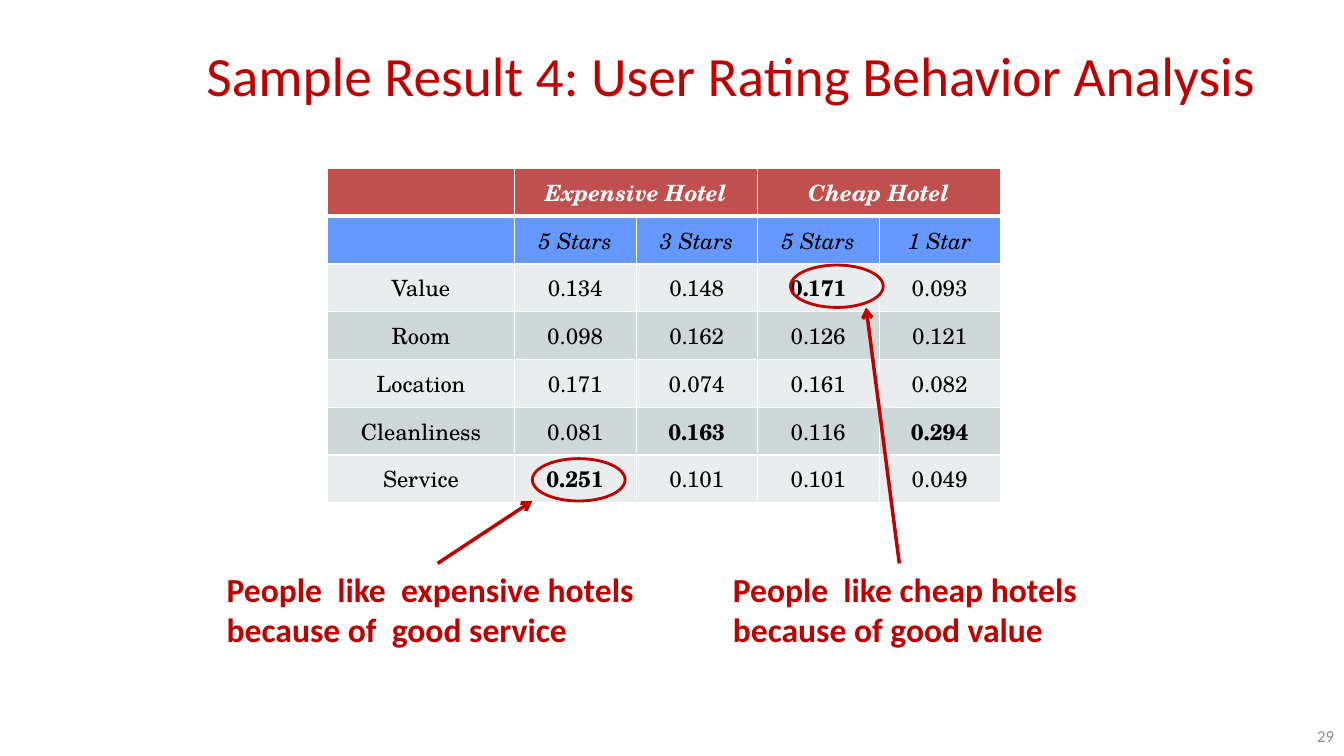
"""Build the slide on user rating behavior for expensive and cheap hotels."""
from dataclasses import dataclass

from lxml.etree import SubElement
from pptx import Presentation
from pptx.dml.color import RGBColor
from pptx.enum.shapes import MSO_CONNECTOR as Connector, MSO_SHAPE as Shape
from pptx.enum.text import MSO_ANCHOR as Anchor, PP_ALIGN as Align
from pptx.oxml.ns import qn
from pptx.slide import Slide
from pptx.table import _Cell as Cell
from pptx.text.text import TextFrame
from pptx.util import Emu, Pt

EMU_PER_PX = 9144

RED = RGBColor(0xC0, 0x00, 0x00)
BRICK = RGBColor(0xC0, 0x50, 0x4D)
BLUE = RGBColor(0x66, 0x99, 0xFF)
PALE = RGBColor(0xE9, 0xED, 0xED)
MIST = RGBColor(0xCF, 0xD8, 0xD9)
GRAY = RGBColor(0x8C, 0x8C, 0x8C)
WHITE = RGBColor(0xFF, 0xFF, 0xFF)
BLACK = RGBColor(0x00, 0x00, 0x00)

SANS = "Calibri"
SERIF = "TeX Gyre Schola"

RATINGS = [
    ["", "Expensive Hotel", "", "Cheap Hotel", ""],
    ["", "5 Stars", "3 Stars", "5 Stars", "1 Star"],
    ["Value", "0.134", "0.148", "0.171", "0.093"],
    ["Room", "0.098", "0.162", "0.126", "0.121"],
    ["Location", "0.171", "0.074", "0.161", "0.082"],
    ["Cleanliness", "0.081", "0.163", "0.116", "0.294"],
    ["Service", "0.251", "0.101", "0.101", "0.049"],
]
COLUMN_WIDTHS = [185, 121, 120, 121, 120]
TOP_RATINGS = {(2, 3), (5, 2), (5, 4), (6, 1)}


@dataclass(frozen=True)
class Box:
    left: int
    top: int
    width: int
    height: int

    def emu(self) -> tuple[Emu, Emu, Emu, Emu]:
        return px(self.left), px(self.top), px(self.width), px(self.height)


@dataclass(frozen=True)
class TextStyle:
    font: str
    size: float
    color: RGBColor
    bold: bool = False
    italic: bool = False
    align: Align = Align.LEFT


@dataclass(frozen=True)
class Finding:
    text: str
    note: Box
    ring: Box
    arrow: tuple[int, int, int, int]


NOTE_STYLE = TextStyle(SANS, 24, RED, bold=True)
TITLE_STYLE = TextStyle(SANS, 39.6, RED, align=Align.CENTER)
NUMBER_STYLE = TextStyle(SANS, 12, GRAY, align=Align.RIGHT)

FINDINGS = [
    Finding("People  like  expensive hotels\nbecause of  good service",
            Box(215, 559, 460, 91), Box(528, 455, 92, 42), (434, 559, 528, 497)),
    Finding("People  like cheap hotels because of good value",
            Box(717, 559, 441, 91), Box(784, 263, 92, 42), (892, 559, 859, 305)),
]


def px(length: int) -> Emu:
    return Emu(length * EMU_PER_PX)


def write(frame: TextFrame, text: str, style: TextStyle) -> None:
    frame.text = text
    for paragraph in frame.paragraphs:
        paragraph.alignment = style.align
        for run in paragraph.runs:
            run.font.name = style.font
            run.font.size = Pt(style.size)
            run.font.color.rgb = style.color
            run.font.bold = style.bold
            run.font.italic = style.italic


def add_text(slide: Slide, box: Box, text: str, style: TextStyle, anchor: Anchor) -> None:
    frame = slide.shapes.add_textbox(*box.emu()).text_frame
    frame.word_wrap = True
    frame.vertical_anchor = anchor
    write(frame, text, style)


def set_borders(cell: Cell, row: int) -> None:
    widths = {"L": 1, "R": 1, "T": 3 if row == 1 else 1, "B": 3 if row == 0 else 1}
    properties = cell._tc.get_or_add_tcPr()
    for side, width in widths.items():
        border = SubElement(properties, qn(f"a:ln{side}"), w=str(Pt(width)))
        SubElement(SubElement(border, qn("a:solidFill")), qn("a:srgbClr"), val=str(WHITE))


def add_ratings(slide: Slide, box: Box) -> None:
    table = slide.shapes.add_table(len(RATINGS), len(COLUMN_WIDTHS), *box.emu()).table
    for column, width in zip(table.columns, COLUMN_WIDTHS):
        column.width = px(width)
    for row, texts in enumerate(RATINGS):
        fill = [BRICK, BLUE][row] if row < 2 else (PALE, MIST)[row % 2]
        for column, text in enumerate(texts):
            cell = table.cell(row, column)
            set_borders(cell, row)
            cell.fill.solid()
            cell.fill.fore_color.rgb = fill
            cell.vertical_anchor = Anchor.MIDDLE
            style = TextStyle(SERIF, 16, WHITE if row == 0 else BLACK,
                              bold=row == 0 or (row, column) in TOP_RATINGS,
                              italic=row < 2, align=Align.CENTER)
            write(cell.text_frame, text, style)
    for first in (1, 3):
        table.cell(0, first).merge(table.cell(0, first + 1))


def add_finding(slide: Slide, finding: Finding) -> None:
    ring = slide.shapes.add_shape(Shape.OVAL, *finding.ring.emu())
    ring.shadow.inherit = False
    ring.fill.background()
    ring.line.color.rgb = RED
    ring.line.width = Pt(2)

    add_text(slide, finding.note, finding.text, NOTE_STYLE, Anchor.TOP)

    arrow = slide.shapes.add_connector(Connector.STRAIGHT, *map(px, finding.arrow))
    arrow.line.color.rgb = RED
    arrow.line.width = Pt(2.5)
    SubElement(arrow.line._get_or_add_ln(), qn("a:tailEnd"), type="arrow")
    SubElement(arrow._element.spPr, qn("a:effectLst"))


def main() -> None:
    deck = Presentation()
    deck.slide_width, deck.slide_height = px(1333), px(750)
    slide = deck.slides.add_slide(deck.slide_layouts[5])

    title = slide.shapes.title
    title.left, title.top, title.width, title.height = Box(150, 33, 1150, 150).emu()
    title.text_frame.vertical_anchor = Anchor.TOP
    title.text_frame.margin_top = px(8)
    write(title.text_frame, "Sample Result 4: User Rating Behavior Analysis", TITLE_STYLE)

    add_ratings(slide, Box(325, 167, 667, 332))
    for finding in FINDINGS:
        add_finding(slide, finding)
    add_text(slide, Box(1022, 710, 311, 40), "29", NUMBER_STYLE, Anchor.MIDDLE)

    deck.save("out.pptx")


if __name__ == "__main__":
    main()
